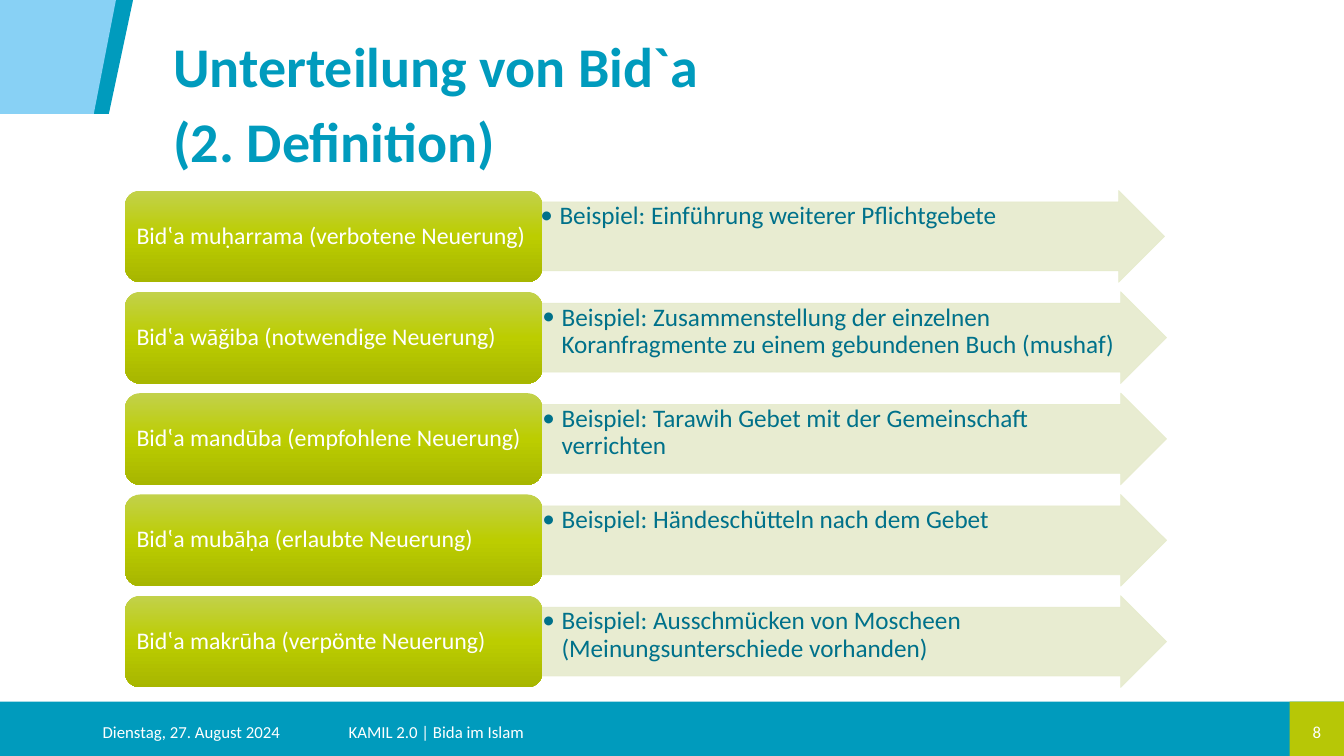
from lxml import etree
from pptx import Presentation
from pptx.dml.color import RGBColor
from pptx.enum.shapes import MSO_SHAPE
from pptx.enum.text import MSO_ANCHOR, MSO_AUTO_SIZE, PP_ALIGN
from pptx.oxml import parse_xml
from pptx.oxml.ns import qn
from pptx.util import Inches, Pt

RECTANGLE, ROUNDED = MSO_SHAPE.RECTANGLE, MSO_SHAPE.ROUNDED_RECTANGLE
ARROW = MSO_SHAPE.RIGHT_ARROW
TOP, MIDDLE = MSO_ANCHOR.TOP, MSO_ANCHOR.MIDDLE
LEFT, CENTER = PP_ALIGN.LEFT, PP_ALIGN.CENTER
NO_AUTOSIZE = MSO_AUTO_SIZE.NONE

FONT = "Calibri"
WHITE = RGBColor(0xFF, 0xFF, 0xFF)
TEAL = RGBColor(0x00, 0x9B, 0xBD)
DARK_TEAL = RGBColor(0x00, 0x71, 0x8A)
SKY = RGBColor(0x88, 0xD1, 0xF5)
LIME = RGBColor(0xB7, 0xC7, 0x06)
PALE_GREEN = RGBColor(0xE6, 0xEB, 0xCC)
LABEL_STOPS = [
    (0, RGBColor(0xC2, 0xD1, 0x4B)),
    (50, RGBColor(0xBC, 0xCD, 0x00)),
    (100, RGBColor(0xA7, 0xB6, 0x00)),
]
DRAWING_NS = "http://schemas.openxmlformats.org/drawingml/2006/main"

FIRST_ROW_TOP, LAST_ROW_TOP, ROW_HEIGHT = 1.89, 5.91, 0.91
ROWS = [
    ("Bidʽa muḥarrama (verbotene Neuerung)",
     "Beispiel: Einführung weiterer Pflichtgebete"),
    ("Bidʽa wāǧiba (notwendige Neuerung)",
     "Beispiel: Zusammenstellung der einzelnen Koranfragmente "
     "zu einem gebundenen Buch (mushaf)"),
    ("Bidʽa mandūba (empfohlene Neuerung)",
     "Beispiel: Tarawih Gebet mit der Gemeinschaft verrichten"),
    ("Bidʽa mubāḥa (erlaubte Neuerung)",
     "Beispiel: Händeschütteln nach dem Gebet"),
    ("Bidʽa makrūha (verpönte Neuerung)",
     "Beispiel: Ausschmücken von Moscheen (Meinungsunterschiede vorhanden)"),
]


def paint(shape, color):
    """Give a shape a plain fill without line or shadow."""
    shape.shadow.inherit = False
    shape.fill.solid()
    shape.fill.fore_color.rgb = color
    shape.line.fill.background()


def add_block(slide, kind, left, top, width, height, color):
    """Add a plainly filled preset shape."""
    shape = slide.shapes.add_shape(
        kind, Inches(left), Inches(top), Inches(width), Inches(height))
    paint(shape, color)
    return shape


def add_slanted(slide, points, color):
    """Add a filled polygon through the given points."""
    corners = [(Inches(x), Inches(y)) for x, y in points]
    builder = slide.shapes.build_freeform(*corners[0], scale=1.0)
    builder.add_line_segments(corners[1:], close=True)
    paint(builder.convert_to_shape(), color)


def set_frame(shape, anchor, margins):
    """Set wrapping, anchor and the left, top, right, bottom margins."""
    frame = shape.text_frame
    frame.word_wrap = True
    frame.auto_size = NO_AUTOSIZE
    frame.vertical_anchor = anchor
    (frame.margin_left, frame.margin_top,
     frame.margin_right, frame.margin_bottom) = map(Inches, margins)
    return frame


def style(paragraph, size, color, alignment=LEFT, bold=False):
    """Set alignment and font of a paragraph."""
    paragraph.alignment = alignment
    font = paragraph.font
    font.name, font.size, font.bold = FONT, Pt(size), bold
    font.color.rgb = color


def add_footer(slide, text, left, width, alignment=LEFT):
    """Add a text box in the footer band."""
    box = slide.shapes.add_textbox(
        Inches(left), Inches(7.06), Inches(width), Inches(0.4))
    frame = set_frame(box, MIDDLE, (0.1, 0.05, 0.1, 0.05))
    frame.text = text
    style(frame.paragraphs[0], 12, WHITE, alignment)


def set_title(slide, lines):
    """Place and format the title placeholder."""
    title = slide.shapes.title
    title.left, title.top = Inches(1.62), Inches(0.23)
    title.width, title.height = Inches(7.01), Inches(1.66)
    frame = set_frame(title, MIDDLE, (0.1, 0.05, 0.1, 0.05))
    frame.text = "\n".join(lines)
    for index, paragraph in enumerate(frame.paragraphs):
        paragraph.line_spacing = 0.9
        paragraph.space_before = Pt(10 if index else 0)
        style(paragraph, 40, TEAL, bold=True)


def fill_gradient(shape, stops):
    """Fill a shape from top to bottom through the colour stops."""
    marks = "".join(
        f'<a:gs pos="{position * 1000}"><a:srgbClr val="{color}"/></a:gs>'
        for position, color in stops)
    gradient = parse_xml(
        f'<a:gradFill xmlns:a="{DRAWING_NS}" rotWithShape="1">'
        f'<a:gsLst>{marks}</a:gsLst><a:lin ang="5400000" scaled="0"/></a:gradFill>')
    properties = shape._element.spPr
    properties.replace(properties.find(qn("a:solidFill")), gradient)


def add_example(slide, text, left, top):
    """Add a translucent arrow holding a bulleted example."""
    arrow = add_block(slide, ARROW, left, top, 6.2, ROW_HEIGHT, PALE_GREEN)
    arrow.adjustments[0], arrow.adjustments[1] = 0.75, 0.5
    arrow.line.color.rgb = PALE_GREEN
    arrow.line.width = Pt(0.5)
    for color in arrow._element.spPr.iter(qn("a:srgbClr")):
        etree.SubElement(color, qn("a:alpha")).set("val", "90000")
    frame = set_frame(arrow, TOP, (0.01, 0.01, 0.01, 0.01))
    frame.text = text
    paragraph = frame.paragraphs[0]
    paragraph.line_spacing = 0.9
    properties = paragraph._p.get_or_add_pPr()
    properties.set("marL", str(Inches(0.19)))
    properties.set("indent", str(-Inches(0.19)))
    etree.SubElement(properties, qn("a:buFont")).set("typeface", FONT)
    etree.SubElement(properties, qn("a:buChar")).set("char", "•")
    style(paragraph, 18, DARK_TEAL)


def add_label(slide, text, top):
    """Add a rounded gradient label for one kind of innovation."""
    label = add_block(slide, ROUNDED, 1.24, top, 4.14, ROW_HEIGHT, LIME)
    fill_gradient(label, LABEL_STOPS)
    frame = set_frame(label, MIDDLE, (0.07, 0.04, 0.07, 0.04))
    frame.text = text
    frame.paragraphs[0].line_spacing = 0.9
    style(frame.paragraphs[0], 17, WHITE)


def main():
    """Build the slide and save it."""
    presentation = Presentation()
    presentation.slide_width, presentation.slide_height = Inches(13.33), Inches(7.5)
    slide = presentation.slides.add_slide(presentation.slide_layouts[5])

    add_block(slide, RECTANGLE, 0, 6.96, 13.33, 0.54, TEAL)
    add_block(slide, RECTANGLE, 12.79, 6.96, 0.54, 0.54, LIME)
    add_slanted(slide, [(0.11, 0), (1.32, 0), (1.08, 1.13), (0.11, 1.13)], TEAL)
    add_slanted(slide, [(0, 0), (1.15, 0), (0.93, 1.13), (0, 1.13)], SKY)
    add_footer(slide, "Dienstag, 27. August 2024", 0.92, 2.36)
    add_footer(slide, "KAMIL 2.0 | Bida im Islam", 3.36, 9.06)
    add_footer(slide, "8", 12.79, 0.54, CENTER)
    set_title(slide, ["Unterteilung von Bid`a", "(2. Definition)"])

    pitch = (LAST_ROW_TOP - FIRST_ROW_TOP) / (len(ROWS) - 1)
    for index, (label, example) in enumerate(ROWS):
        top = FIRST_ROW_TOP + index * pitch
        add_example(slide, example, 5.37 if index else 5.35, top)
        add_label(slide, label, top)

    presentation.save("out.pptx")


if __name__ == "__main__":
    main()
